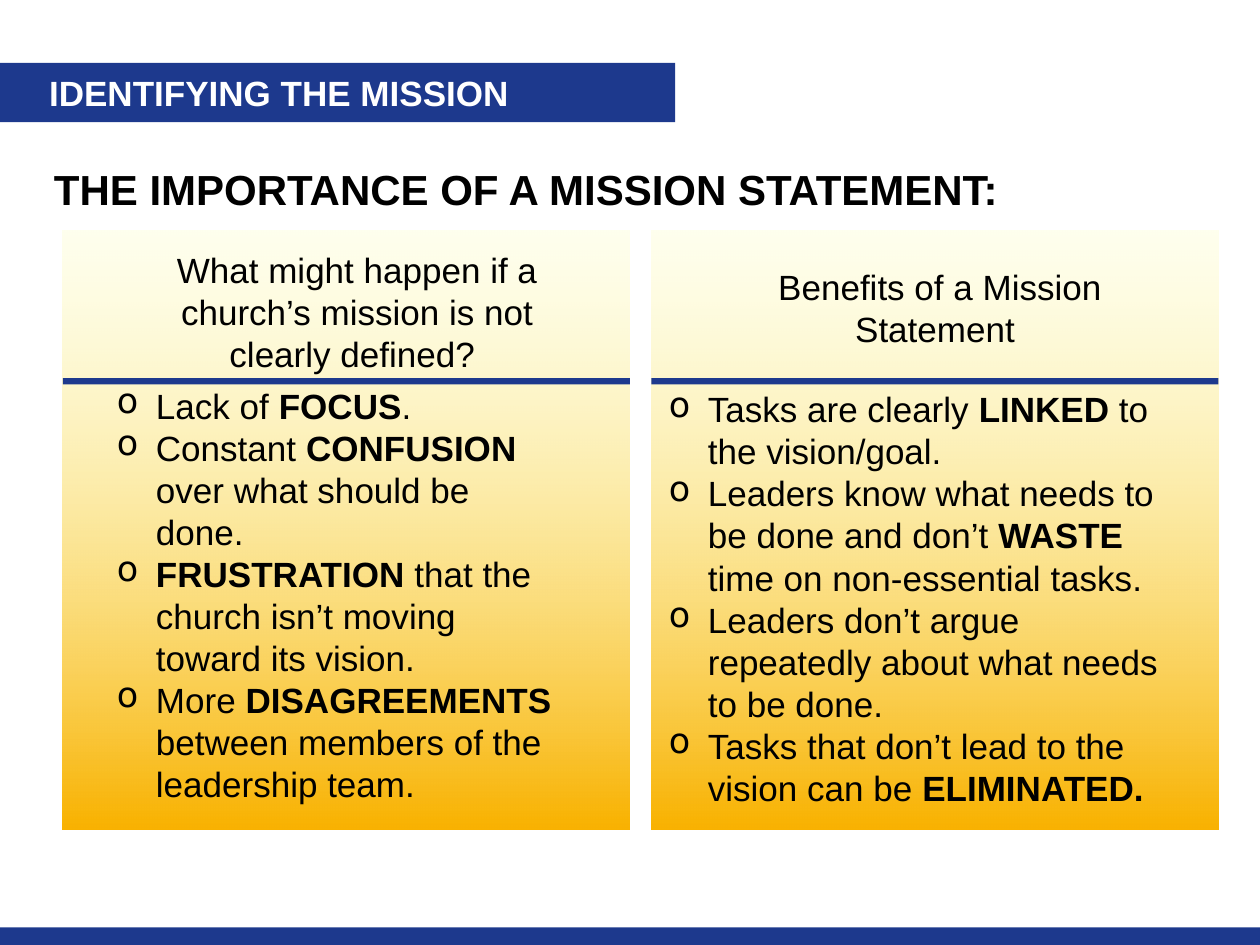
from lxml.etree import SubElement
from pptx import Presentation
from pptx.dml.color import RGBColor as RGB
from pptx.enum.shapes import MSO_SHAPE as SHAPE
from pptx.enum.text import MSO_ANCHOR as ANCHOR, PP_ALIGN as ALIGN
from pptx.oxml.ns import qn
from pptx.util import Inches, Pt

# Content: bold words are marked with *
BANNER = "*IDENTIFYING THE MISSION*"
HEADING = "*THE IMPORTANCE OF A MISSION STATEMENT:*"
PANELS = [
    {"left": 0.5,
     "title": "What might happen if a church’s mission is not clearly defined? ",
     "title_box": (0.92, 1.92, 3.83, 1.11),
     "list_box": (0.83, 3, 3.67, 3.47),
     "items": ["Lack of *FOCUS*.",
               "Constant *CONFUSION *over what should be done.",
               "*FRUSTRATION* that the church isn’t moving toward its vision.",
               "More *DISAGREEMENTS* between members of the leadership team."]},
    {"left": 5.17,
     "title": "Benefits of a Mission Statement ",
     "title_box": (5.42, 2.06, 4.08, 0.77),
     "list_box": (5.21, 3.03, 4.21, 3.47),
     "items": ["Tasks are clearly *LINKED* to the vision/goal.",
               "Leaders know what needs to be done and don’t *WASTE* time on "
               "non-essential tasks.",
               "Leaders don’t argue repeatedly about what needs to be done.",
               "Tasks that don’t lead to the vision can be *ELIMINATED.*"]},
]
THEME = {"font": "Arial", "heading": 24, "body": 20,
         "blue": RGB(0x1D, 0x39, 0x8D), "gold": RGB(0xF9, 0xB2, 0x00),
         "cream": RGB(0xFD, 0xFF, 0xB8), "cream_alpha": 24,
         "black": RGB(0, 0, 0), "white": RGB(255, 255, 255)}
PANEL_TOP, PANEL_W, PANEL_H = 1.83, 4.5, 4.75
RULE_TOP, RULE_H = 3, 0.05
BULLET_INDENT = Inches(0.31)

prs = Presentation()
prs.slide_width, prs.slide_height = Inches(10), Inches(7.5)
slide = prs.slides.add_slide(prs.slide_layouts[6])


def add_rect(*box):
    sp = slide.shapes.add_shape(SHAPE.RECTANGLE, *map(Inches, box))
    sp.shadow.inherit = False
    sp.line.fill.background()
    return sp


def add_bar(*box):
    sp = add_rect(*box)
    sp.fill.solid()
    sp.fill.fore_color.rgb = THEME["blue"]
    return sp


def add_panel(*box):
    sp = add_rect(*box)
    sp.fill.gradient()
    sp.fill.gradient_angle = 90
    bottom, top = sp.fill.gradient_stops
    for stop, color, pos in ((bottom, "gold", 0), (top, "cream", 1)):
        stop.color.rgb, stop.position = THEME[color], pos
    color = list(sp._element.spPr.iter(qn("a:srgbClr")))[-1]
    SubElement(color, qn("a:alpha"), val=str(THEME["cream_alpha"] * 1000))


def write(sp, lines, size="body", color="black", align=ALIGN.LEFT, bullet=None):
    tf = sp.text_frame
    tf.word_wrap = True
    for i, line in enumerate(lines):
        p = tf.paragraphs[0] if i == 0 else tf.add_paragraph()
        p.alignment = align
        if bullet:
            pPr = p._p.get_or_add_pPr()
            pPr.set("marL", str(BULLET_INDENT))
            pPr.set("indent", str(-BULLET_INDENT))
            SubElement(pPr, qn("a:buChar"), char=bullet)
        for n, text in enumerate(line.split("*")):
            if not text:
                continue
            r = p.add_run()
            r.text = text
            style = {"name": THEME["font"], "size": Pt(THEME[size]), "bold": n % 2 == 1}
            for name, value in style.items():
                setattr(r.font, name, value)
            r.font.color.rgb = THEME[color]


def add_text(box, lines, **style):
    write(slide.shapes.add_textbox(*map(Inches, box)), lines, **style)


# Gradient panels
for panel in PANELS:
    add_panel(panel["left"], PANEL_TOP, PANEL_W, PANEL_H)

# Banner, heading and footer bar
banner = add_bar(0, 0.5, 5.36, 0.47)
margins = {"margin_left": Inches(0.39), "margin_top": 0, "margin_bottom": 0,
           "vertical_anchor": ANCHOR.MIDDLE}
for name, value in margins.items():
    setattr(banner.text_frame, name, value)
write(banner, [BANNER], color="white")
add_text((0.33, 1.25, 9.33, 0.5), [HEADING], size="heading")
add_bar(0, 7.36, 10, 0.16)

# Panel titles, lists and rules
for panel in PANELS:
    add_text(panel["title_box"], [panel["title"]], align=ALIGN.CENTER)
    add_text(panel["list_box"], panel["items"], bullet="o")
    add_bar(panel["left"], RULE_TOP, PANEL_W, RULE_H)

prs.save("out.pptx")
